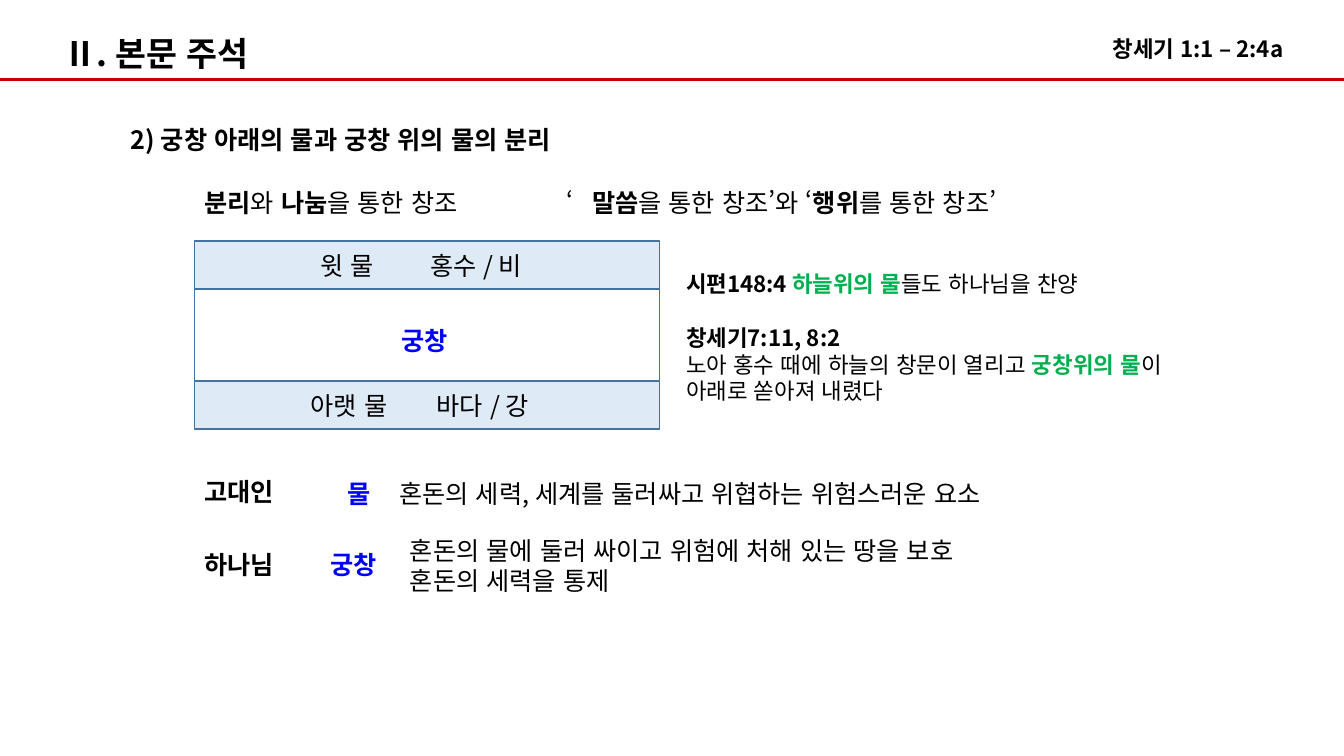
from lxml.etree import SubElement
from pptx import Presentation
from pptx.dml.color import RGBColor
from pptx.enum.lang import MSO_LANGUAGE_ID as Language
from pptx.enum.shapes import MSO_CONNECTOR as Line, MSO_SHAPE as Shape
from pptx.enum.text import MSO_ANCHOR as Anchor, MSO_AUTO_SIZE as AutoSize, PP_ALIGN as Align
from pptx.oxml.ns import qn
from pptx.util import Pt

BLACK = RGBColor(0x00, 0x00, 0x00)
BLUE = RGBColor(0x00, 0x00, 0xFF)
GREEN = RGBColor(0x00, 0xB0, 0x50)
RED = RGBColor(0xC0, 0x00, 0x00)
WATER = RGBColor(0xDE, 0xEB, 0xF7)
BORDER = RGBColor(0x43, 0x73, 0x9E)
FONT = "Noto Sans CJK KR"

PLAIN = {"bold": False}
BOLD = {"bold": True}
SKY = {"bold": True, "color": BLUE}
KEY = {"bold": True, "color": GREEN}

# Left edge shared by the statements and the bands
LEFT = 139


def set_format(target, values):
    for name, value in values.items():
        setattr(target, name, value)


def add_tab(paragraph, position):
    tabs = SubElement(paragraph._p.get_or_add_pPr(), qn("a:tabLst"))
    SubElement(tabs, qn("a:tab"), pos=str(Pt(position)), algn="l")


def add_run(paragraph, words, size, bold, color=BLACK):
    run = paragraph.add_run()
    run.text = words
    set_format(run.font, {"size": Pt(size), "bold": bold, "name": FONT,
                          "language_id": Language.KOREAN})
    run.font.color.rgb = color
    SubElement(run._r.get_or_add_rPr(), qn("a:ea"), typeface=FONT)


def write(frame, lines, size=18, spacing=1.2, tab=None, align=Align.LEFT):
    """Each line is a list of (words, style) pairs."""
    for index, line in enumerate(lines):
        paragraph = frame.add_paragraph() if index else frame.paragraphs[0]
        set_format(paragraph, {"alignment": align, "line_spacing": Pt(size * spacing)})
        if tab:
            add_tab(paragraph, tab)
        for words, style in line:
            add_run(paragraph, words, size, **style)


def add_text(slide, left, top, width, height, lines, **layout):
    box = slide.shapes.add_textbox(Pt(left), Pt(top), Pt(width), Pt(height))
    frame = box.text_frame
    set_format(frame, {"word_wrap": False, "auto_size": AutoSize.SHAPE_TO_FIT_TEXT})
    write(frame, lines, **layout)
    return frame


def add_band(slide, top, height, fill):
    band = slide.shapes.add_shape(Shape.RECTANGLE, Pt(LEFT), Pt(top), Pt(332), Pt(height))
    band.shadow.inherit = False
    if fill:
        band.fill.solid()
        band.fill.fore_color.rgb = fill
    else:
        band.fill.background()
    band.line.color.rgb = BORDER
    band.line.width = Pt(1)
    return band.text_frame


def add_header_rule(slide, y):
    rule = slide.shapes.add_connector(Line.STRAIGHT, Pt(0), Pt(y), Pt(960), Pt(y))
    rule.line.color.rgb = RED
    rule.line.width = Pt(2.25)
    SubElement(rule._element.spPr, qn("a:effectLst"))


def add_cosmos(slide):
    # Upper water, firmament and lower water, stacked
    bands = [
        (34.5, WATER, "윗 물\t홍수 / 비", 89.6, 78.6),
        (65.5, None, None, None, None),
        (34.5, WATER, "아랫 물\t바다 / 강", 83, 90),
    ]
    top = 172
    for height, fill, words, indent, tab in bands:
        frame = add_band(slide, top, height, fill)
        if words:
            set_format(frame, {"vertical_anchor": Anchor.MIDDLE, "margin_left": Pt(indent)})
            write(frame, [[(words, PLAIN)]], tab=tab)
        top += height
    add_text(slide, 279.4, 229, 51, 28.8, [[("궁창", SKY)]])


def main():
    prs = Presentation()
    set_format(prs, {"slide_width": Pt(960), "slide_height": Pt(540)})
    slide = prs.slides.add_slide(prs.slide_layouts[6])

    # Header
    add_text(slide, 787.7, 12.2, 149, 36, [[("창세기 1:1 – 2:4a ", BOLD)]],
             size=16, spacing=1.8, align=Align.JUSTIFY)
    add_header_rule(slide, 56.7)
    add_text(slide, 38.2, 20.2, 159, 36, [[("Ⅱ. 본문 주석", BOLD)]], size=24)

    # Topic and the two ways of creation
    add_text(slide, 86.4, 85, 349, 28.8, [[("2) 궁창 아래의 물과 궁창 위의 물의 분리", BOLD)]])
    add_text(slide, LEFT, 130.3, 215, 28.8, [[
        ("분리", BOLD), ("와 ", PLAIN), ("나눔", BOLD), ("을 통한 창조", PLAIN)]])
    add_text(slide, 397.4, 130.3, 400, 28.8, [[
        ("‘\t", PLAIN), ("말씀", BOLD), ("을 통한 창조’와 ‘", PLAIN),
        ("행위", BOLD), ("를 통한 창조’", PLAIN)]], tab=18.5)

    add_cosmos(slide)

    # Scripture references
    scripture = add_text(slide, 483, 189.4, 394, 104.4, [
        [("시편148:4 ", BOLD), ("하늘위의 물", KEY), ("들도 하나님을 찬양", PLAIN)],
        [("창세기7:11, 8:2", BOLD)],
        [("노아 홍수 때에 하늘의 창문이 열리고 ", PLAIN), ("궁창위의 물", KEY), ("이", PLAIN)],
        [("아래로 쏟아져 내렸다", PLAIN)],
    ], size=16)
    scripture.paragraphs[1].space_before = Pt(19.2)

    # The ancients and the water
    add_text(slide, LEFT, 337, 69, 28.8, [[("고대인", BOLD)]])
    add_text(slide, 241.2, 338.4, 519, 28.8, [[
        ("물", SKY), ("\t혼돈의 세력, 세계를 둘러싸고 위협하는 위험스러운 요소", PLAIN)]], tab=37)

    # God and the firmament
    add_text(slide, LEFT, 388.8, 69, 28.8, [[("하나님", BOLD)]])
    add_text(slide, 229, 388.8, 51, 28.8, [[("궁창", SKY)]])
    add_text(slide, 285.8, 378.7, 448, 51, [
        [("혼돈의 물에 둘러 싸이고 위험에 처해 있는 땅을 보호", PLAIN)],
        [("혼돈의 세력을 통제", PLAIN)],
    ])

    prs.save("out.pptx")


if __name__ == "__main__":
    main()
